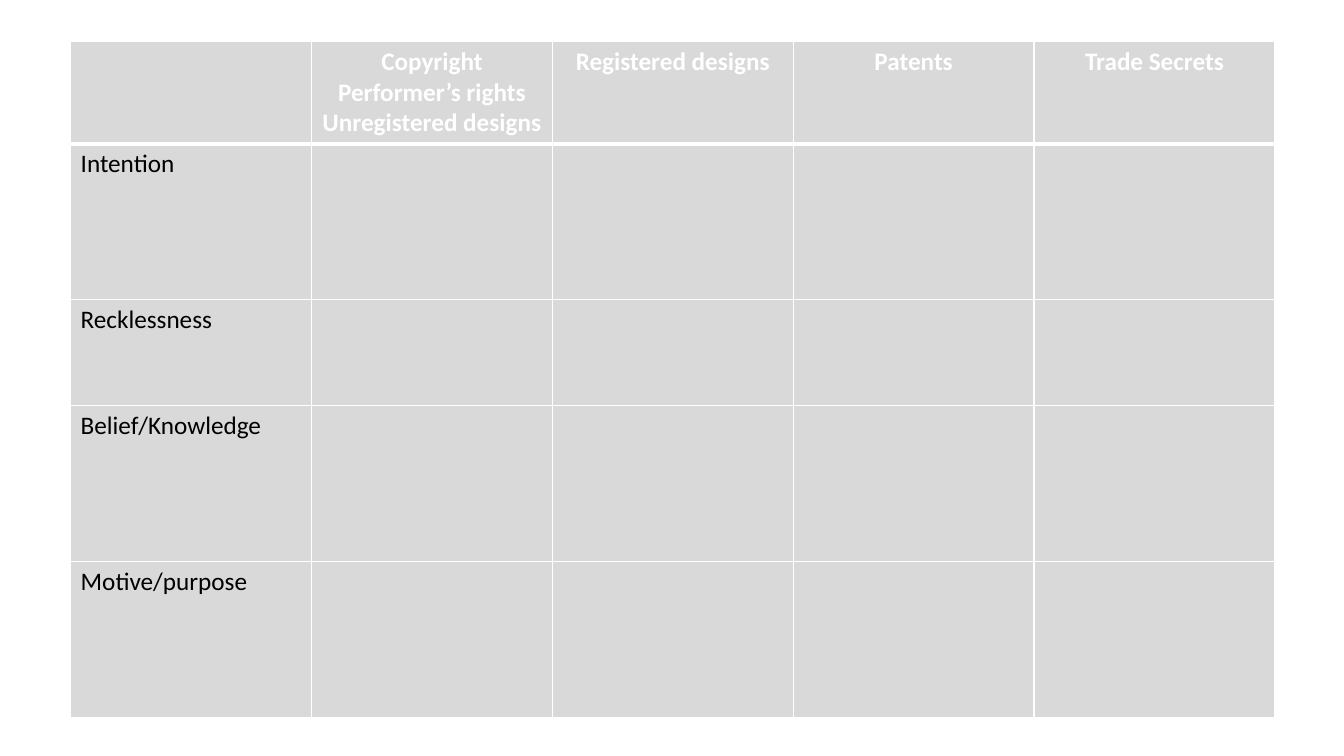
from dataclasses import dataclass

import pptx
import pptx.dml.color
import pptx.enum.text
import pptx.oxml.ns
import pptx.util
from lxml import etree

Cm = pptx.util.Cm
Pt = pptx.util.Pt
WHITE, BLACK, GREY = "FFFFFF", "000000", "D9D9D9"


@dataclass
class Row:
    height: float
    texts: list[str]
    header: bool = False


# Table content, heights in cm
COLUMNS = 5
COLUMN_WIDTH = 6.07
ROWS = [
    Row(2.54, ["", "Copyright\nPerformer’s rights\nUnregistered designs",
               "Registered designs", "Patents", "Trade Secrets"], header=True),
    Row(3.93, ["Intention"]),
    Row(2.67, ["Recklessness"]),
    Row(3.93, ["Belief/Knowledge"]),
    Row(3.93, ["Motive/purpose"]),
]
HEADER = {"size": Pt(18), "name": "Calibri", "bold": True}
BODY = {**HEADER, "bold": False}


def rgb(value: str) -> pptx.dml.color.RGBColor:
    return pptx.dml.color.RGBColor.from_string(value)


def set_borders(cell, widths: dict[str, float]) -> None:
    tc_pr = cell._tc.get_or_add_tcPr()
    qn = pptx.oxml.ns.qn
    for side, width in widths.items():
        ln = etree.SubElement(tc_pr, qn(f"a:ln{side}"), w=str(Pt(width)))
        fill = etree.SubElement(ln, qn("a:solidFill"))
        etree.SubElement(fill, qn("a:srgbClr"), val=WHITE)


def draw_cell(cell, text: str, header: bool, below_header: bool) -> None:
    set_borders(cell, {"L": 1, "R": 1, "T": 3 if below_header else 1,
                       "B": 3 if header else 1})
    cell.fill.solid()
    cell.fill.fore_color.rgb = rgb(GREY)
    tf = cell.text_frame
    tf.text = text
    for p in tf.paragraphs:
        if header:
            p.alignment = pptx.enum.text.PP_ALIGN.CENTER
        for r in p.runs:
            for key, value in (HEADER if header else BODY).items():
                setattr(r.font, key, value)
            r.font.color.rgb = rgb(WHITE if header else BLACK)


def draw_table(s, rows: list[Row], left: float, top: float) -> None:
    table = s.shapes.add_table(
        len(rows), COLUMNS, Cm(left), Cm(top), Cm(COLUMNS * COLUMN_WIDTH),
        Cm(sum(row.height for row in rows))).table
    for column in table.columns:
        column.width = Cm(COLUMN_WIDTH)
    for i, row in enumerate(rows):
        table.rows[i].height = Cm(row.height)
        for j in range(COLUMNS):
            text = row.texts[j] if j < len(row.texts) else ""
            draw_cell(table.cell(i, j), text, row.header, i == 1)


def main() -> None:
    prs = pptx.Presentation()
    prs.slide_width, prs.slide_height = Cm(33.87), Cm(19.05)
    s = prs.slides.add_slide(prs.slide_layouts[6])
    draw_table(s, ROWS, left=1.78, top=1.04)
    prs.save("out.pptx")


if __name__ == "__main__":
    main()
